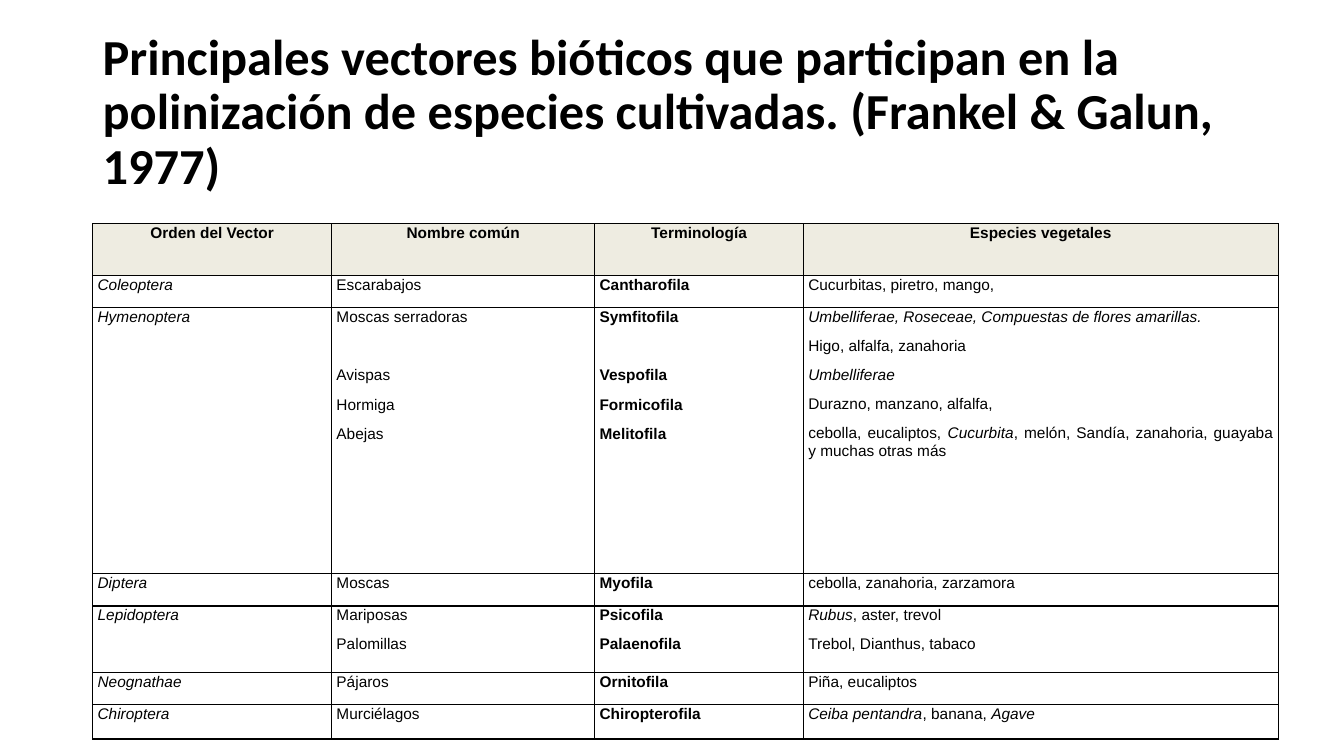
from pptx import Presentation
from pptx.dml.color import RGBColor as Rgb
from pptx.enum.text import MSO_ANCHOR as Anchor, MSO_AUTO_SIZE as Auto, PP_ALIGN as Align
from pptx.oxml import parse_xml
from pptx.oxml.ns import nsdecls
from pptx.util import Cm, Pt

TITLE = ("Principales vectores bióticos que participan en la polinización "
         "de especies cultivadas. (Frankel & Galun, 1977)")
WIDTHS = [6.02, 6.63, 5.26, 11.96]
HEIGHTS = [1.3, 0.81, 6.71, 0.81, 1.68, 0.81, 0.86]
ROWS = [
    ["Orden del Vector", "Nombre común", "Terminología", "Especies vegetales"],
    ["*Coleoptera*", "Escarabajos", "Cantharofila", "Cucurbitas, piretro, mango,"],
    ["*Hymenoptera*",
     "Moscas serradoras||Avispas|Hormiga|Abejas",
     "Symfitofila||Vespofila|Formicofila|Melitofila",
     "*Umbelliferae, Roseceae, Compuestas de flores amarillas.*|"
     "Higo, alfalfa, zanahoria|*Umbelliferae*|Durazno, manzano, alfalfa,|"
     "cebolla, eucaliptos, *Cucurbita*, melón, Sandía, zanahoria, guayaba y muchas otras más"],
    ["*Diptera*", "Moscas", "Myofila", "cebolla, zanahoria, zarzamora"],
    ["*Lepidoptera*", "Mariposas|Palomillas", "Psicofila|Palaenofila",
     "*Rubus*, aster, trevol|Trebol, Dianthus, tabaco"],
    ["*Neognathae*", "Pájaros", "Ornitofila", "Piña, eucaliptos"],
    ["*Chiroptera*", "Murciélagos", "Chiropterofila", "*Ceiba pentandra*, banana, *Agave*"],
]


def color(code):
    return Rgb.from_string(code)


class Deck:
    """Holds the style and the current slide; in cells * toggles italic, | starts a paragraph."""
    ink, shade = "000000", "EEECE1"
    head, body = "Calibri", "Arial"
    size, after, line = 11, 8, 21

    def __init__(self):
        self.show = Presentation()
        self.show.slide_width, self.show.slide_height = Cm(33.87), Cm(19.05)
        self.slide = self.show.slides.add_slide(self.show.slide_layouts[6])

    def run(self, para, text, face, size, bold=False, slant=False):
        run = para.add_run()
        run.text = text
        font = run.font
        font.name, font.size, font.bold, font.italic = face, Pt(size), bold, slant
        font.color.rgb = color(self.ink)

    def title(self, text, left, top, width, height):
        box = self.slide.shapes.add_textbox(Cm(left), Cm(top), Cm(width), Cm(height))
        frame = box.text_frame
        frame.word_wrap, frame.auto_size = True, Auto.NONE
        frame.vertical_anchor = Anchor.MIDDLE
        para = frame.paragraphs[0]
        para.line_spacing = 0.9
        self.run(para, text, self.head, 36, bold=True)

    def frame(self, cell):
        props = cell._tc.get_or_add_tcPr()
        for side in "LRTB":
            props.append(parse_xml(
                f'<a:ln{side} {nsdecls("a")} w="12700"><a:solidFill>'
                f'<a:srgbClr val="{self.ink}"/></a:solidFill></a:ln{side}>'))

    def fill(self, cell, text, bold, top):
        cell.margin_left = cell.margin_right = Cm(0.12)
        cell.margin_top = cell.margin_bottom = 0
        self.frame(cell)
        if top:
            cell.fill.solid()
            cell.fill.fore_color.rgb = color(self.shade)
        else:
            cell.fill.background()
        para, gap = cell.text_frame.paragraphs[0], 0
        for i, part in enumerate(text.split("|")):
            if not part:
                gap += self.line
                continue
            if i:
                para = cell.text_frame.add_paragraph()
            para.alignment = Align.CENTER if top else Align.JUSTIFY
            para.line_spacing = 1.05
            para.space_before, para.space_after = Pt(gap), Pt(self.after)
            gap = 0
            for j, piece in enumerate(part.split("*")):
                if piece:
                    self.run(para, piece, self.body, self.size, bold, j % 2 == 1)

    def table(self, rows, left, top, widths, heights):
        grid = self.slide.shapes.add_table(
            len(rows), len(widths), Cm(left), Cm(top),
            Cm(sum(widths)), Cm(sum(heights))).table
        grid.first_row = grid.horz_banding = False
        for col, width in zip(grid.columns, widths):
            col.width = Cm(width)
        for r, (row, height) in enumerate(zip(rows, heights)):
            grid.rows[r].height = Cm(height)
            for c, text in enumerate(row):
                self.fill(grid.cell(r, c), text, r == 0 or c == 2, r == 0)


def main():
    deck = Deck()
    deck.title(TITLE, 2.34, 1.02, 30.35, 3.68)
    deck.table(ROWS, 2.34, 5.64, WIDTHS, HEIGHTS)
    deck.show.save("out.pptx")


if __name__ == "__main__":
    main()
